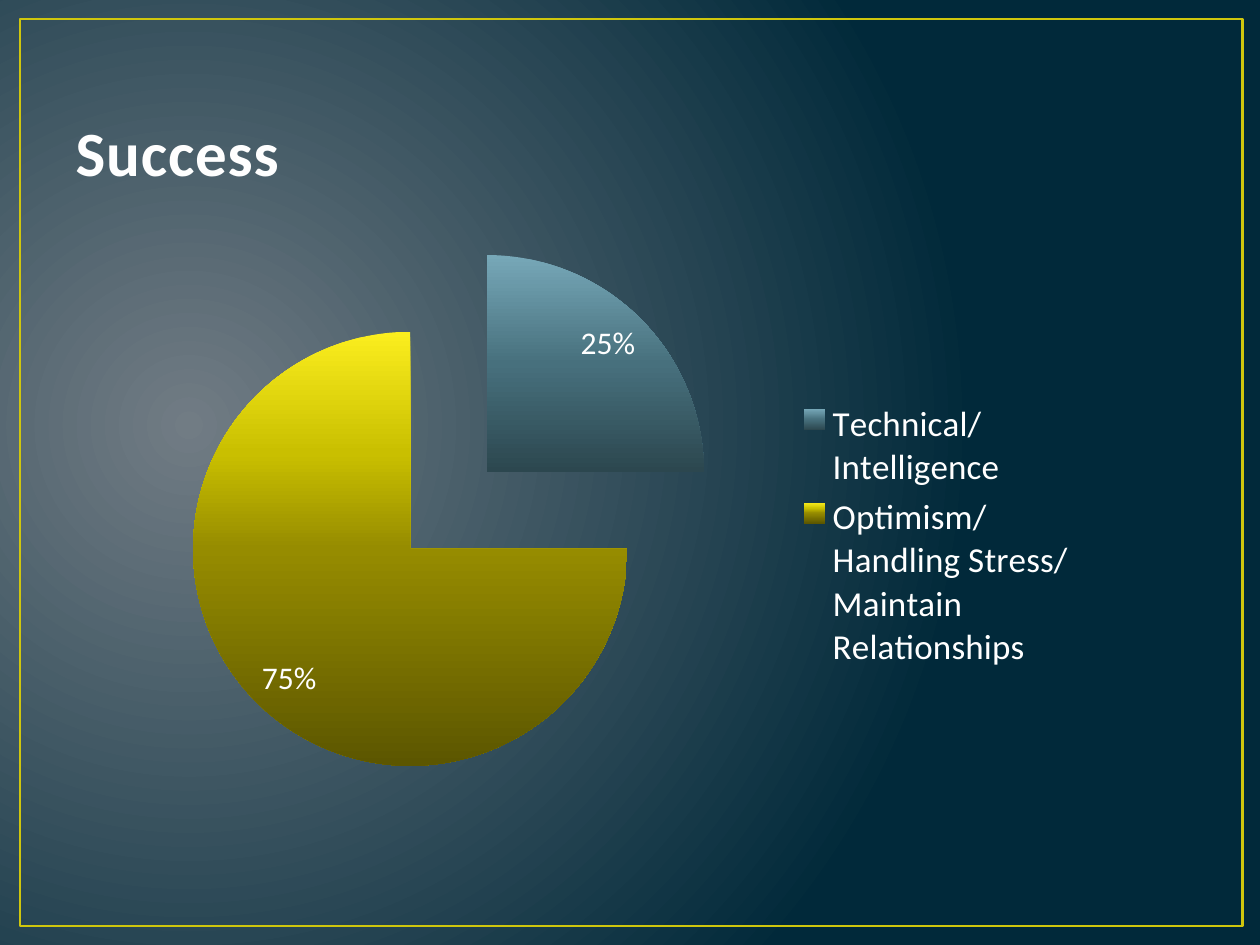
from lxml import etree
from pptx import Presentation
from pptx.chart import data
from pptx.dml.color import RGBColor
from pptx.enum import chart as kinds, shapes, text
from pptx.oxml import ns
from pptx.util import Inches, Pt

FONT = "Calibri"
WHITE = "FFFFFF"
GOLD = "CFC60D"
SLICES = [
    [(0, "77A8B8"), (50, "47707D"), (100, "2C474F")],
    [(0, "FBEE1E"), (28, "C9BF00"), (50, "968C00"), (100, "5C5600")],
]


def color(code):
    return RGBColor.from_string(code)


def style(font, size, code=WHITE, bold=False):
    font.name = FONT
    font.size = Pt(size)
    font.bold = bold
    font.color.rgb = color(code)


def write(frame, words, space=0, **look):
    run = frame.paragraphs[0].add_run()
    run.text = words
    style(run.font, **look)
    run.font._element.set("spc", str(int(space * 100)))


def add(parent, tag, **attrs):
    node = etree.SubElement(parent, ns.qn(tag))
    for key, val in attrs.items():
        node.set(key, str(val))
    return node


def shade(grad, stops, center=None):
    for node in list(grad):
        grad.remove(node)
    group = add(grad, "a:gsLst")
    for pos, code in stops:
        add(add(group, "a:gs", pos=pos * 1000), "a:srgbClr", val=code)
    if center:
        ring = add(grad, "a:path", **{"path": "circle"})
        add(ring, "a:fillToRect", **{k: v * 1000 for k, v in center.items()})
    else:
        add(grad, "a:lin", ang=5400000, scaled=0)


def place(part, index, box, inner=False):
    for old in part.findall(ns.qn("c:layout")):
        part.remove(old)
    layout = add(part, "c:layout")
    part.insert(index, layout)
    manual = add(layout, "c:manualLayout")
    if inner:
        add(manual, "c:layoutTarget", val="inner")
    for key in ("xMode", "yMode"):
        add(manual, "c:" + key, val="edge")
    for key, val in zip("xywh", box):
        add(manual, "c:" + key, val=val)


def backdrop(slide):
    slide.background.fill.gradient()
    grad = next(slide._element.iter(ns.qn("a:gradFill")))
    shade(grad, [(0, "717C84"), (100, "01293A")], dict(l=15, t=50, r=85, b=60))


def border(slide):
    rect = slide.shapes.add_shape(
        shapes.MSO_SHAPE.RECTANGLE,
        Inches(0.16), Inches(0.15), Inches(9.7), Inches(7.2))
    rect.shadow.inherit = False
    rect.fill.background()
    rect.line.color.rgb = color(GOLD)
    rect.line.width = Pt(1.5)
    slide.shapes._spTree.insert(2, rect._element)


def heading(slide, words):
    title = slide.shapes.title
    title.left, title.top = Inches(0.5), Inches(0.3)
    title.width, title.height = Inches(9), Inches(1.25)
    frame = title.text_frame
    frame.vertical_anchor = text.MSO_ANCHOR.BOTTOM
    frame.paragraphs[0].alignment = text.PP_ALIGN.LEFT
    write(frame, words, space=0.5, size=36, code="FEFEFE", bold=True)


def pie(slide, cats, vals):
    source = data.CategoryChartData()
    source.categories = cats
    source.add_series("Series 1", vals)
    chart = slide.shapes.add_chart(
        kinds.XL_CHART_TYPE.PIE, Inches(0.5), Inches(1.75),
        Inches(9), Inches(4.95), source).chart
    style(chart.font, 18)
    chart.has_title = False
    plot = chart.plots[0]
    plot.vary_by_categories = True
    series = plot.series[0]
    for i, stops in enumerate(SLICES):
        form = series.points[i].format
        form.fill.gradient()
        form.line.fill.background()
        point = series._element.findall(ns.qn("c:dPt"))[i]
        shade(next(point.iter(ns.qn("a:gradFill"))), stops)
    burst = add(series._element, "c:explosion", val=25)
    series._element.find(ns.qn("c:dPt")).addprevious(burst)
    plot.has_data_labels = True
    labels = plot.data_labels
    labels.show_percentage = True
    labels.show_value = False
    labels.position = kinds.XL_LABEL_POSITION.INSIDE_END
    style(labels.font, 18)
    chart.has_legend = True
    legend = chart.legend
    legend.position = kinds.XL_LEGEND_POSITION.RIGHT
    legend.include_in_layout = False
    style(legend.font, 20)
    place(legend._element, 1, (0.64, 0.28, 0.26, 0.45))
    area = next(chart._chartSpace.iter(ns.qn("c:plotArea")))
    place(area, 0, (0.1, 0.03, 0.48, 0.87), inner=True)


def main():
    deck = Presentation()
    deck.slide_width, deck.slide_height = Inches(10), Inches(7.5)
    slide = deck.slides.add_slide(deck.slide_layouts[5])
    backdrop(slide)
    border(slide)
    heading(slide, "Success")
    pie(slide, ["Technical/ Intelligence",
                "Optimism/ Handling Stress/ Maintain Relationships"], [25, 75])
    deck.save("out.pptx")


if __name__ == "__main__":
    main()
